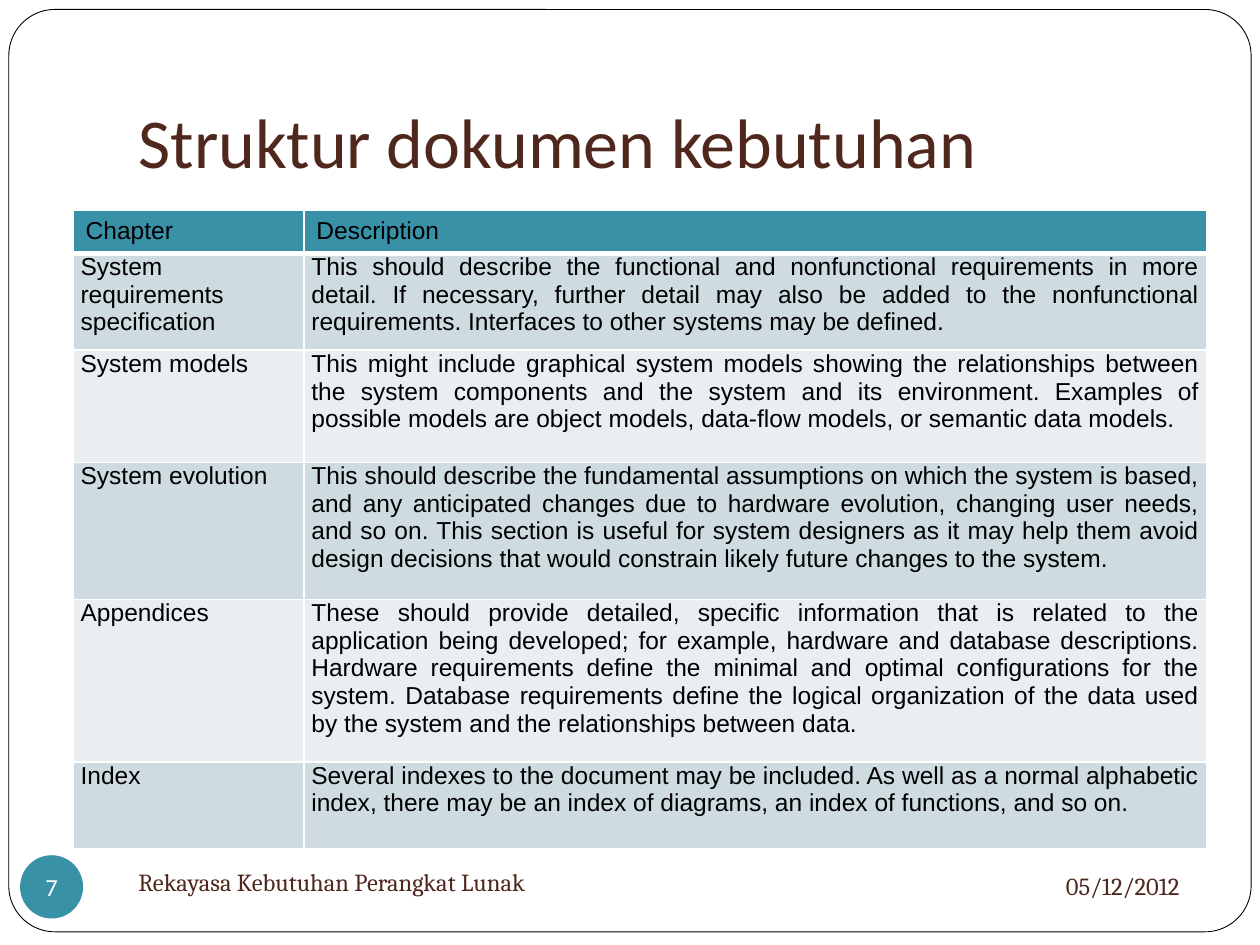
from dataclasses import dataclass

import lxml.etree
import pptx
import pptx.dml.color
import pptx.enum.shapes
import pptx.enum.text
import pptx.oxml.ns
import pptx.util

Inches = pptx.util.Inches
Align = pptx.enum.text.PP_ALIGN
Anchor = pptx.enum.text.MSO_ANCHOR
Shape = pptx.enum.shapes.MSO_SHAPE

TEAL, BROWN, WHITE, BLACK = "3891A7", "4F271C", "FFFFFF", "000000"
BANDS = ("CEDCE1", "E8EEF1")
COLUMN_SHARES = (0.2035, 0.7965)
ROW_HEIGHTS = (0.34, 0.77, 0.89, 1.09, 1.29, 0.69)
ROWS = [
    ("Chapter", "Description"),
    ("System requirements specification",
     "This should describe the functional and nonfunctional requirements in more detail. "
     "If necessary, further detail may also be added to the nonfunctional requirements. "
     "Interfaces to other systems may be defined."),
    ("System models",
     "This might include graphical system models showing the relationships between the "
     "system components and the system and its environment. Examples of possible models "
     "are object models, data-flow models, or semantic data models."),
    ("System evolution",
     "This should describe the fundamental assumptions on which the system is based, and "
     "any anticipated changes due to hardware evolution, changing user needs, and so on. "
     "This section is useful for system designers as it may help them avoid design "
     "decisions that would constrain likely future changes to the system."),
    ("Appendices",
     "These should provide detailed, specific information that is related to the "
     "application being developed; for example, hardware and database descriptions. "
     "Hardware requirements define the minimal and optimal configurations for the system. "
     "Database requirements define the logical organization of the data used by the system "
     "and the relationships between data."),
    ("Index",
     "Several indexes to the document may be included. As well as a normal alphabetic "
     "index, there may be an index of diagrams, an index of functions, and so on."),
]


@dataclass
class Box:
    left: float
    top: float
    width: float
    height: float

    def inner(self, left, top, width, height):
        """Return a box inside this one, given as shares of its width and height."""
        return Box(self.left + left * self.width, self.top + top * self.height,
                   width * self.width, height * self.height)

    def lengths(self):
        return [Inches(value) for value in (self.left, self.top, self.width, self.height)]


def color(hex_text):
    return pptx.dml.color.RGBColor.from_string(hex_text)


def fill_solid(target, hex_text):
    target.fill.solid()
    target.fill.fore_color.rgb = color(hex_text)


def write(frame, text, font, size, hex_text, align=Align.LEFT):
    paragraph = frame.paragraphs[0]
    paragraph.alignment = align
    run = paragraph.add_run()
    run.text = text
    run.font.name = font
    run.font.size = pptx.util.Pt(size)
    run.font.color.rgb = color(hex_text)


def set_margins(target, left, top, right, bottom):
    target.margin_left, target.margin_top = Inches(left), Inches(top)
    target.margin_right, target.margin_bottom = Inches(right), Inches(bottom)


def set_borders(cell, bottom_width):
    """Draw white lines round a cell, placed before its fill as the schema asks."""
    properties = cell._tc.get_or_add_tcPr()
    for index, side in enumerate(("lnL", "lnR", "lnT", "lnB")):
        width = bottom_width if side == "lnB" else 1
        line = lxml.etree.Element(pptx.oxml.ns.qn(f"a:{side}"), w=str(pptx.util.Pt(width)))
        solid = lxml.etree.SubElement(line, pptx.oxml.ns.qn("a:solidFill"))
        lxml.etree.SubElement(solid, pptx.oxml.ns.qn("a:srgbClr"), val=WHITE)
        properties.insert(index, line)


def add_frame(slide, box):
    frame = slide.shapes.add_shape(Shape.ROUNDED_RECTANGLE, *box.lengths())
    frame.adjustments[0] = 0.05
    frame.shadow.inherit = False
    fill_solid(frame, WHITE)
    frame.line.color.rgb = color(BLACK)
    frame.line.width = pptx.util.Pt(0.5)
    slide.shapes.title.element.addprevious(frame.element)


def add_title(slide, box, text):
    title = slide.shapes.title
    title.left, title.top, title.width, title.height = box.lengths()
    frame = title.text_frame
    frame.auto_size = pptx.enum.text.MSO_AUTO_SIZE.NONE
    frame.vertical_anchor = Anchor.BOTTOM
    set_margins(frame, 0.1, 0.05, 0.1, 0.1)
    write(frame, text, "Calibri", 40, BROWN)


def add_chapter_table(slide, box):
    table = slide.shapes.add_table(len(ROWS), len(COLUMN_SHARES), *box.lengths()).table
    for column, share in zip(table.columns, COLUMN_SHARES):
        column.width = Inches(share * box.width)
    for index, (row, height, texts) in enumerate(zip(table.rows, ROW_HEIGHTS, ROWS)):
        row.height = Inches(height * box.height / sum(ROW_HEIGHTS))
        is_header = index == 0
        for cell, text in zip(row.cells, texts):
            fill_solid(cell, TEAL if is_header else BANDS[(index - 1) % 2])
            set_borders(cell, 3 if is_header else 1)
            if not is_header:
                set_margins(cell, 0.06, 0, 0.06, 0.1)
            write(cell.text_frame, text, "Arial", 14, BLACK,
                  Align.LEFT if is_header else Align.JUSTIFY)


def add_footer_text(slide, box, text, align):
    frame = slide.shapes.add_textbox(*box.lengths()).text_frame
    frame.word_wrap = True
    frame.vertical_anchor = Anchor.MIDDLE
    write(frame, text, "Cambria", 14, BROWN, align)


def add_page_number(slide, box, text):
    badge = slide.shapes.add_shape(Shape.OVAL, *box.lengths())
    badge.shadow.inherit = False
    fill_solid(badge, TEAL)
    badge.line.fill.background()
    frame = badge.text_frame
    frame.word_wrap = False
    frame.vertical_anchor = Anchor.MIDDLE
    set_margins(frame, 0, 0, 0, 0)
    write(frame, text, "Calibri", 14, WHITE, Align.CENTER)


def add_footer(slide, box):
    add_page_number(slide, box.inner(0.016, 0.07, 0.05, 0.93), "7")
    add_footer_text(slide, box.inner(0.1, 0, 0.433, 0.93),
                    "Rekayasa Kebutuhan Perangkat Lunak", Align.LEFT)
    add_footer_text(slide, box.inner(0.675, 0.04, 0.271, 0.96), "05/12/2012", Align.RIGHT)


def main():
    presentation = pptx.Presentation()
    presentation.slide_width, presentation.slide_height = Inches(10), Inches(7.5)
    slide = presentation.slides.add_slide(presentation.slide_layouts[5])
    page = Box(0, 0, 10, 7.5)
    add_frame(slide, page.inner(0.007, 0.01, 0.986, 0.976))
    add_title(slide, page.inner(0.1, 0.04, 0.85, 0.167), "Struktur dokumen kebutuhan")
    add_chapter_table(slide, Box(0.58, 1.67, 9, 5.07))
    add_footer(slide, page.inner(0, 0.9, 1, 0.072))
    presentation.save("out.pptx")


if __name__ == "__main__":
    main()
